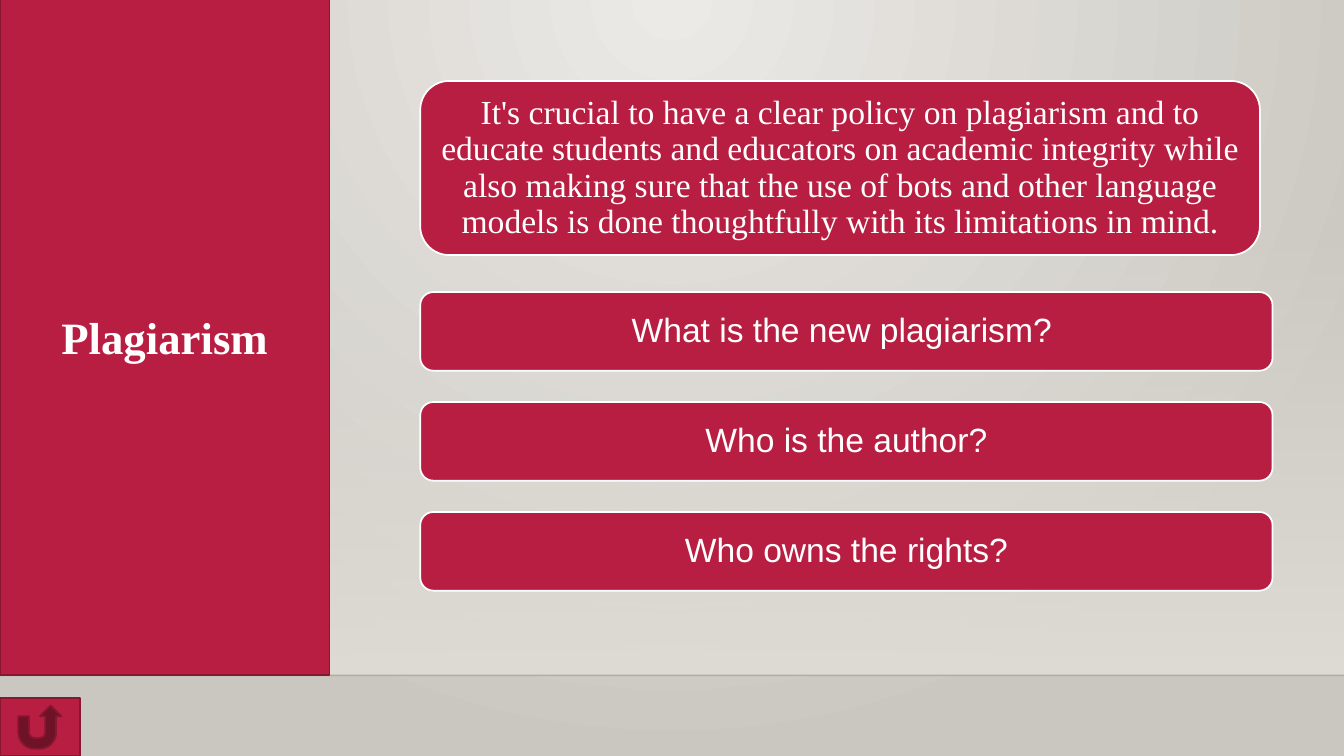
"""Build the Plagiarism slide: a title rail, a policy statement and three questions."""
from dataclasses import dataclass

from lxml.etree import SubElement
from pptx import Presentation
from pptx.dml.color import RGBColor as Color
from pptx.enum.shapes import MSO_CONNECTOR as Connector, MSO_SHAPE as Shape
from pptx.enum.text import MSO_ANCHOR as Anchor, PP_ALIGN as Align
from pptx.oxml.ns import qn
from pptx.util import Pt


@dataclass(frozen=True)
class Theme:
    red: Color = Color.from_string("B71E42")
    dark_red: Color = Color.from_string("871631")
    white: Color = Color.from_string("FFFFFF")
    glow: Color = Color.from_string("ECEAE7")
    stone: Color = Color.from_string("CAC7C1")
    sand: Color = Color.from_string("DFDBD5")
    floor: Color = Color.from_string("000001")
    serif: str = "Times New Roman"
    sans: str = "Arial"
    title_size: int = 32
    body_size: int = 24


theme = Theme()
deck = Presentation()
deck.slide_width, deck.slide_height = Pt(960), Pt(540)
page = deck.slides.add_slide(deck.slide_layouts[6])


def add_panel(kind, left, top, width, height, outline):
    panel = page.shapes.add_shape(kind, Pt(left), Pt(top), Pt(width), Pt(height))
    panel.shadow.inherit = False
    panel.fill.solid()
    panel.fill.fore_color.rgb = theme.red
    panel.line.color.rgb = outline
    panel.line.width = Pt(1.25)
    return panel


def write(box, text, face, size, bold=False, spacing=0.9):
    frame = box.text_frame
    frame.word_wrap = True
    frame.vertical_anchor = Anchor.MIDDLE
    para = frame.paragraphs[0]
    para.alignment = Align.CENTER
    para.line_spacing = spacing
    span = para.add_run()
    span.text = text
    span.font.name = face
    span.font.size = Pt(size)
    span.font.bold = bold
    span.font.color.rgb = theme.white


backdrop = page.background.fill
backdrop.gradient()
for stop, colour in zip(backdrop.gradient_stops, (theme.glow, theme.stone)):
    stop.color.rgb = colour
gradient = page.element.find(".//" + qn("a:gradFill"))
gradient.remove(gradient.find(qn("a:lin")))
circle = SubElement(gradient, qn("a:path"), {"path": "circle"})
SubElement(circle, qn("a:fillToRect"), {"l": "43000", "t": "0", "r": "43000", "b": "100000"})

wall = page.shapes.add_shape(Shape.RECTANGLE, Pt(0), Pt(159.12), Pt(960), Pt(323.28))
wall.shadow.inherit = False
wall.line.fill.background()
wall.fill.gradient()
wall.fill.gradient_angle = 270
for stop in wall.fill.gradient_stops:
    stop.color.rgb = theme.sand

floor_line = page.shapes.add_connector(Connector.STRAIGHT, Pt(0), Pt(482.4), Pt(960), Pt(482.4))
floor_line.line.color.rgb = theme.floor
floor_line.line.width = Pt(1)
SubElement(floor_line.element.spPr, qn("a:effectLst"))

for item, opacity in ((wall, 0), (floor_line, 20)):
    first_colour = item.element.find(".//" + qn("a:srgbClr"))
    SubElement(first_colour, qn("a:alpha"), {"val": str(opacity * 1000)})

add_panel(Shape.ACTION_BUTTON_RETURN, 0, 498.8, 57, 41.2, theme.dark_red)

rail = add_panel(Shape.RECTANGLE, 0, -1.2, 235.4, 483.2, theme.dark_red)
write(rail, "Plagiarism", theme.serif, theme.title_size, bold=True, spacing=1)

policy = add_panel(Shape.ROUNDED_RECTANGLE, 300.2, 57.8, 599.8, 124.4, theme.white)
write(
    policy,
    "It's crucial to have a clear policy on plagiarism and to educate students and educators "
    "on academic integrity while also making sure that the use of bots and other language "
    "models is done thoughtfully with its limitations in mind.",
    theme.serif,
    theme.body_size,
)

questions = ("What is the new plagiarism? ", "Who is the author?", "Who owns the rights?")
for row, question in enumerate(questions):
    card = add_panel(Shape.ROUNDED_RECTANGLE, 300.2, 208.6 + 78.55 * row, 608.8, 56.2, theme.white)
    write(card, question, theme.sans, theme.body_size)

deck.save("out.pptx")
